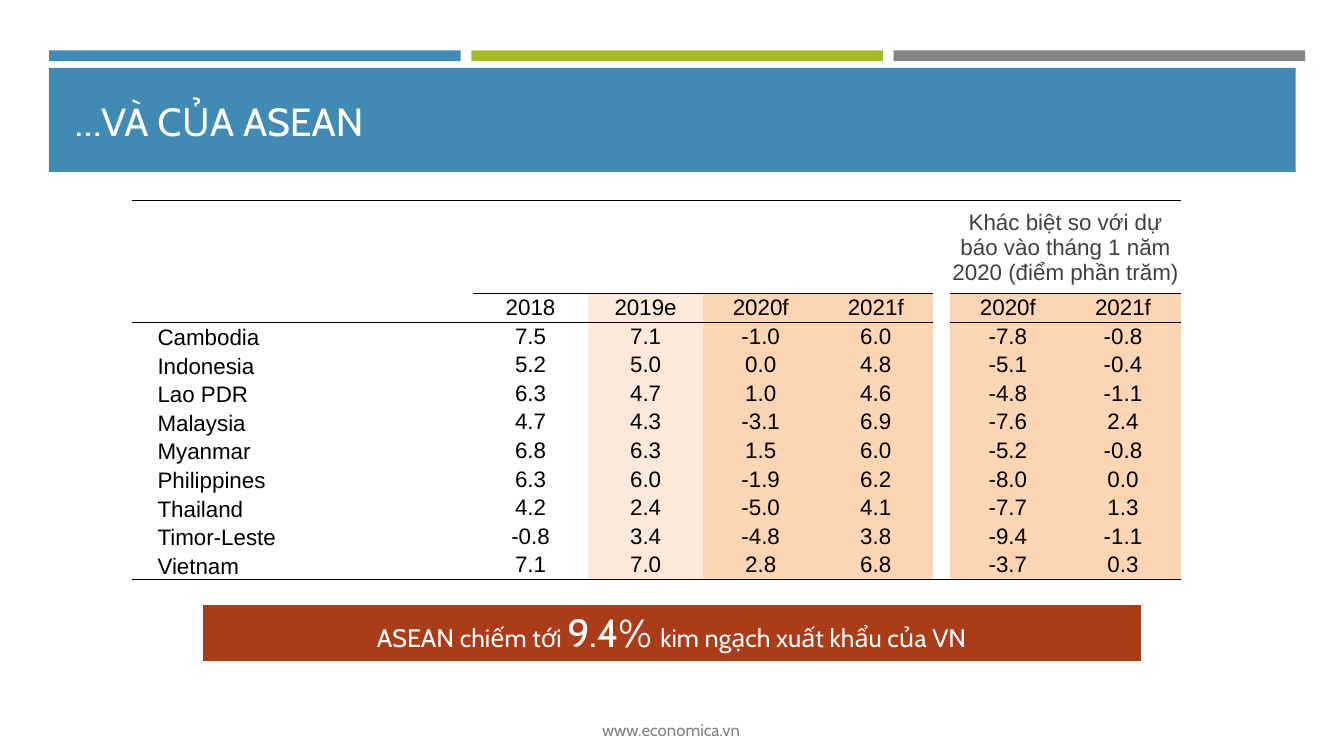
from pptx import Presentation
from pptx.dml.color import RGBColor
from pptx.enum.shapes import MSO_SHAPE
from pptx.enum.text import MSO_ANCHOR, MSO_AUTO_SIZE, PP_ALIGN
from pptx.oxml.ns import qn
from pptx.util import Cm, Pt
from lxml.etree import SubElement

COLORS = {
    "blue": "418AB3", "green": "A6B727", "gray": "838383", "red": "AB3C19",
    "white": "FFFFFF", "black": "000000", "dark": "404040", "footer": "808080",
    "estimate": "FDE9D9", "forecast": "FCD5B4",
}
NO_STYLE = "{2D5ABB26-0587-4C30-8999-92F81FD0307C}"

HEADINGS = ["2018", "2019e", "2020f", "2021f", "", "2020f", "2021f"]
GROWTH = [
    ("Cambodia", "7.5", "7.1", "-1.0", "6.0", "", "-7.8", "-0.8"),
    ("Indonesia", "5.2", "5.0", "0.0", "4.8", "", "-5.1", "-0.4"),
    ("Lao PDR", "6.3", "4.7", "1.0", "4.6", "", "-4.8", "-1.1"),
    ("Malaysia", "4.7", "4.3", "-3.1", "6.9", "", "-7.6", "2.4"),
    ("Myanmar", "6.8", "6.3", "1.5", "6.0", "", "-5.2", "-0.8"),
    ("Philippines", "6.3", "6.0", "-1.9", "6.2", "", "-8.0", "0.0"),
    ("Thailand", "4.2", "2.4", "-5.0", "4.1", "", "-7.7", "1.3"),
    ("Timor-Leste", "-0.8", "3.4", "-4.8", "3.8", "", "-9.4", "-1.1"),
    ("Vietnam", "7.1", "7.0", "2.8", "6.8", "", "-3.7", "0.3"),
]
COLUMN_FILLS = [None, "white", "estimate", "forecast", "forecast", None, "forecast", "forecast"]
GAP = 5  # narrow column between the two groups


class SlideBuilder:
    def __init__(self, slide, font="Cabin", table_font="Arial"):
        self.s = slide
        self.font = font
        self.table_font = table_font

    def run(self, p, text, size, color, font=None):
        r = p.add_run()
        r.text = text
        r.font.size = Pt(size)
        r.font.name = font or self.font
        r.font.color.rgb = RGBColor.from_string(COLORS[color])

    def bar(self, x, y, w, h, color):
        sp = self.s.shapes.add_shape(MSO_SHAPE.RECTANGLE, Cm(x), Cm(y), Cm(w), Cm(h))
        sp.shadow.inherit = False
        sp.fill.solid()
        sp.fill.fore_color.rgb = RGBColor.from_string(COLORS[color])
        sp.line.fill.background()

    def title(self, text, x, y, w, h):
        sp = self.s.shapes.title
        sp.left, sp.top, sp.width, sp.height = Cm(x), Cm(y), Cm(w), Cm(h)
        self.s.shapes._spTree.append(sp._element)  # in front of the banner
        tf = sp.text_frame
        tf.auto_size = MSO_AUTO_SIZE.NONE
        tf.vertical_anchor = MSO_ANCHOR.BOTTOM
        p = tf.paragraphs[0]
        p.alignment = PP_ALIGN.LEFT
        self.run(p, text, 28, "white")

    def footer(self, text, x, y, w, h):
        tf = self.s.shapes.add_textbox(Cm(x), Cm(y), Cm(w), Cm(h)).text_frame
        tf.word_wrap = True
        p = tf.paragraphs[0]
        p.alignment = PP_ALIGN.CENTER
        self.run(p, text, 12, "footer")

    def table(self, x, y, widths, heights):
        frame = self.s.shapes.add_table(len(heights), len(widths), Cm(x), Cm(y),
                                        Cm(sum(widths)), Cm(sum(heights)))
        table = frame.table
        table.first_row = table.horz_banding = False
        table._tbl.tblPr.find(qn("a:tableStyleId")).text = NO_STYLE
        for column, width in zip(table.columns, widths):
            column.width = Cm(width)
        for row, height in zip(table.rows, heights):
            row.height = Cm(height)
        return table

    def border(self, cell, side, color, width):
        ln = SubElement(cell._tc.get_or_add_tcPr(), qn("a:ln" + side), w=str(Pt(width)))
        fill = SubElement(ln, qn("a:solidFill"))
        SubElement(fill, qn("a:srgbClr"), val=COLORS[color])

    def fill(self, cell, color):
        if color:
            cell.fill.solid()
            cell.fill.fore_color.rgb = RGBColor.from_string(COLORS[color])
        else:
            cell.fill.background()

    def cell(self, cell, text, color="black", label=False):
        cell.margin_left = Cm(0.64 if label else 0.02)
        cell.margin_right = cell.margin_top = Cm(0.02)
        cell.margin_bottom = 0
        cell.vertical_anchor = MSO_ANCHOR.BOTTOM if label else MSO_ANCHOR.MIDDLE
        p = cell.text_frame.paragraphs[0]
        if text:
            p.alignment = PP_ALIGN.LEFT if label else PP_ALIGN.CENTER
            self.run(p, text, 16, color, self.table_font)
        else:
            SubElement(p._p, qn("a:endParaRPr"), sz="1000")

    def growth_table(self, x, y):
        widths = [8.59] + [2.9] * 4 + [0.43] + [2.9] * 2
        rows = [[""] * len(widths), ["", *HEADINGS], *GROWTH]
        rows[0][GAP + 1] = "Khác biệt so với dự báo vào tháng 1 năm 2020 (điểm phần trăm)"
        table = self.table(x, y, widths, [2.33] + [0.72] * (len(rows) - 1))
        table.cell(0, GAP + 1).merge(table.cell(0, GAP + 2))
        last = len(rows) - 1
        for i, row in enumerate(rows):
            for j, text in enumerate(row):
                cell = table.cell(i, j)
                if i == 0:
                    self.border(cell, "T", "black", 0.5)
                if i == last or (i == 1 and j != GAP) or (i == 0 and j not in (0, GAP)):
                    self.border(cell, "B", "black", 0.5)
                self.fill(cell, COLUMN_FILLS[j] if i else None)
                self.cell(cell, text, "black" if i else "dark", label=j == 0)

    def callout(self, x, y, w, h, runs):
        cell = self.table(x, y, [w], [h]).cell(0, 0)
        for side, width in (("L", 1), ("R", 1), ("T", 1), ("B", 3)):
            self.border(cell, side, "white", width)
        self.fill(cell, "red")
        p = cell.text_frame.paragraphs[0]
        p.alignment = PP_ALIGN.CENTER
        for text, size in runs:
            self.run(p, text, size, "white")


def main():
    prs = Presentation()
    prs.slide_width, prs.slide_height = Cm(33.87), Cm(19.05)
    s = SlideBuilder(prs.slides.add_slide(prs.slide_layouts[5]))

    # Coloured strips, banner and title
    for i, color in enumerate(("blue", "green", "gray")):
        s.bar(1.24 + i * 10.64, 1.27, 10.37, 0.27, color)
    s.bar(1.23, 1.71, 31.42, 2.62, "blue")
    s.title("…VÀ CỦA ASEAN", 1.63, 1.96, 30.63, 1.8)

    # Growth figures
    s.growth_table(3.33, 5.06)

    # Key message
    s.callout(5.09, 15.24, 23.67, 1.4, [
        ("ASEAN chiếm tới ", 18), ("9.4% ", 28), ("kim ngạch xuất khẩu của VN", 18)])

    # Footer
    s.footer("www.economica.vn", 7.49, 18.01, 18.85, 0.76)

    prs.save("out.pptx")


if __name__ == "__main__":
    main()
